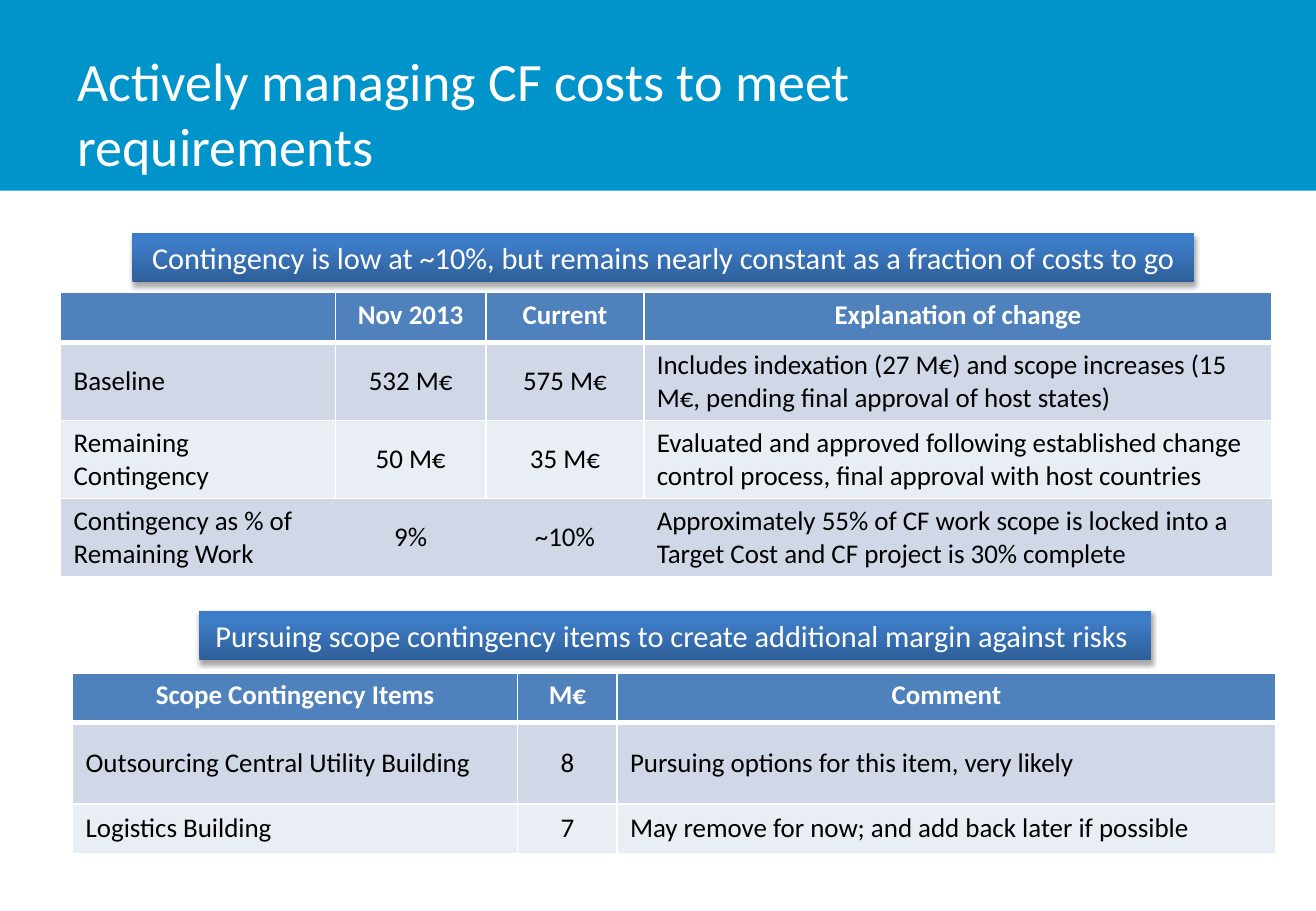
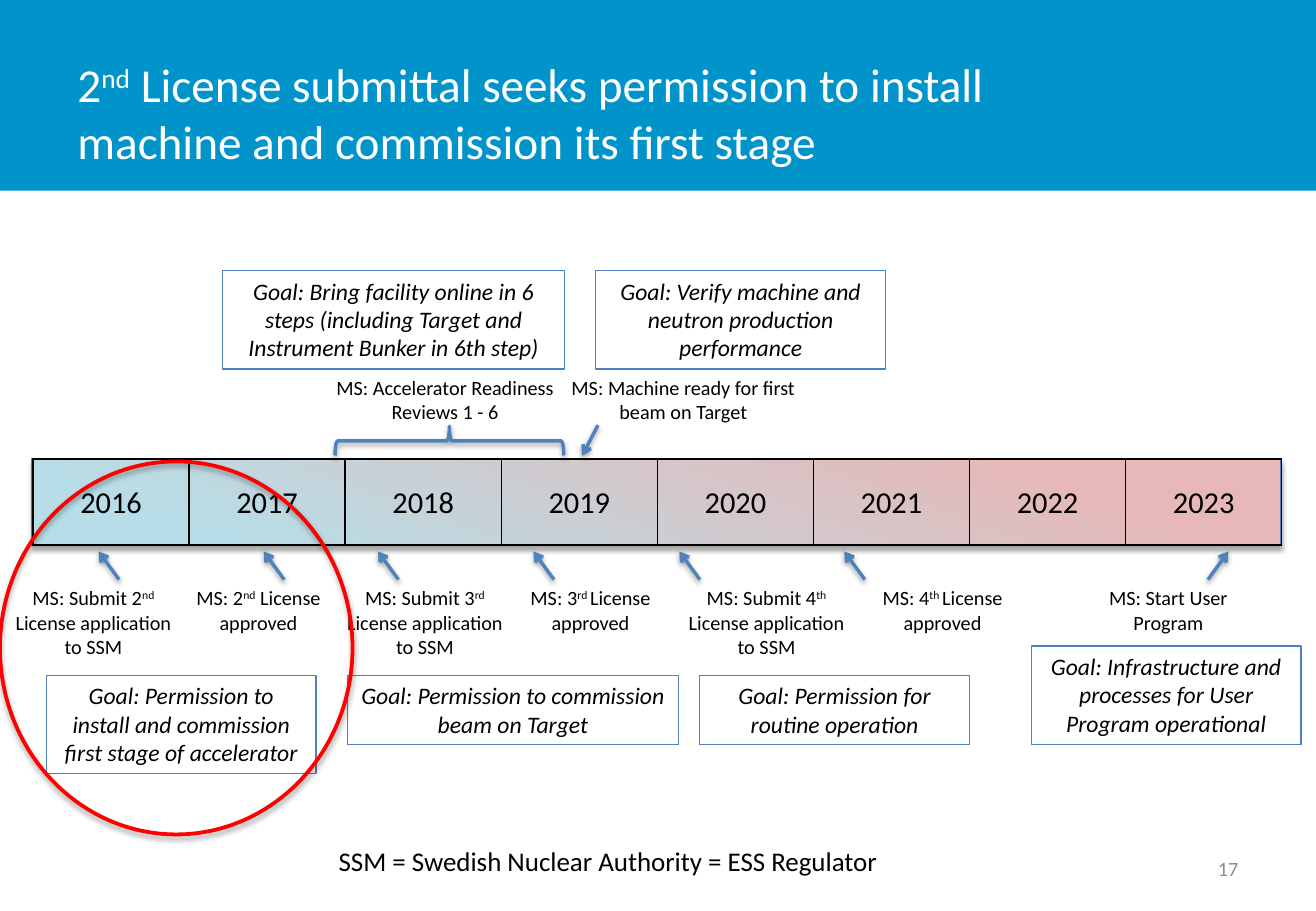
from pptx import Presentation
from pptx.util import Cm, Pt
from pptx.dml.color import RGBColor
from pptx.enum import shapes as sh, text as tx
from pptx.oxml import parse_xml
from pptx.oxml.ns import qn, nsdecls

WHITE = RGBColor(0xFF, 0xFF, 0xFF)
BLACK = RGBColor(0, 0, 0)
CYAN = RGBColor(0x00, 0x94, 0xCA)
BLUE = RGBColor(0x4F, 0x81, 0xBD)
EDGE = RGBColor(0x4B, 0x7E, 0xBC)
PALE = RGBColor(0xD0, 0xD8, 0xE8)
MIST = RGBColor(0xE9, 0xED, 0xF4)
RED = RGBColor(0xFF, 0, 0)
GREY = RGBColor(0x8C, 0x8C, 0x8C)
SHINE = [(0, RGBColor(0x2F, 0x5F, 0x99)), (80, RGBColor(0x3D, 0x7C, 0xC7)),
         (100, RGBColor(0x3A, 0x7C, 0xCB))]
WARM = [(18, RGBColor(0xE6, 0xB9, 0xB8)), (88, RGBColor(0xB7, 0xDE, 0xE8))]

LEFT, MID, RIGHT = tx.PP_ALIGN.LEFT, tx.PP_ALIGN.CENTER, tx.PP_ALIGN.RIGHT
CENTRE = tx.MSO_ANCHOR.MIDDLE
WIDE, HIGH = 27.51, 19.05
NOGRID = "{2D5ABB26-0587-4C30-8999-92F81FD0307C}"

# Text formats
TITLE = dict(size=Pt(32), color=WHITE)
TITLE2 = dict(TITLE, size=Pt(28))
BANNER = dict(size=Pt(18), color=WHITE)
HEAD = dict(size=Pt(16), color=WHITE, bold=True)
BODY = dict(size=Pt(16), color=BLACK)
YEAR = dict(size=Pt(18), color=BLACK)
MARK = dict(size=Pt(12), color=BLACK)
GOAL = dict(size=Pt(14), color=BLACK, italic=True)
PAGE = dict(size=Pt(12), color=GREY)

# Slide 1: banners (text, box) and tables; boxes are left, top, width, height in cm
COSTS = "Actively managing CF costs to meet requirements"
BANNERS = [
    ("Pursuing scope contingency items to create additional margin against risks ",
     (4.17, 12.78, 19.89, 1.02)),
    ("Contingency is low at ~10%, but remains nearly constant as a fraction of costs to go",
     (2.77, 4.88, 22.2, 1.02)),
]
BUDGET = dict(
    spot=(1.27, 6.12), cols=[5.74, 3.15, 3.3, 13.13], tall=[1.04, 1.63, 1.63, 1.63],
    mids={1, 2}, open=3,
    rows=[
        ("", "Nov 2013", "Current", "Explanation of change"),
        ("Baseline", "532 M€", "575 M€",
         "Includes indexation (27 M€) and scope increases (15 M€, pending final approval of host states)"),
        ("Remaining Contingency", "50 M€", "35 M€",
         "Evaluated and approved following established change control process, "
         "final approval with host countries"),
        ("Contingency as % of Remaining Work", "9%", "~10%",
         "Approximately 55% of CF work scope is locked into a Target Cost "
         "and CF project is 30% complete"),
    ])
SCOPE = dict(
    spot=(1.52, 14.07), cols=[9.3, 2.08, 13.77], tall=[1.04, 1.7, 1.04],
    mids={1}, open=None,
    rows=[
        ("Scope Contingency Items", "M€", "Comment"),
        ("Outsourcing Central Utility Building", "8",
         "Pursuing options for this item, very likely"),
        ("Logistics Building", "7", "May remove for now; and add back later if possible"),
    ])

# Slide 2: text between ^ marks is raised
LICENSE = ("2^nd^ License submittal seeks permission to install machine "
           "and commission its first stage")
YEARS = [str(y) for y in range(2016, 2024)]
# Text, left, width, height, arrow tip, arrow lean
STEPS = [
    ("MS: Submit 2^nd^ License application to SSM", -0.1, 4.11, 1.8, 2.06, 0.43),
    ("MS: 2^nd^ License approved", 3.35, 4.11, 1.27, 5.51, 0.43),
    ("MS: Submit 3^rd^ License application to SSM", 6.83, 4.11, 1.8, 7.9, 0.43),
    ("MS: 3^rd ^License approved", 10.29, 4.11, 1.27, 11.15, 0.43),
    ("MS: Submit 4^th^ License application to SSM", 13.97, 4.11, 1.8, 14.2, 0.43),
    ("MS: 4^th ^License approved", 17.65, 4.11, 1.27, 17.65, 0.43),
    ("MS: Start User Program", 22.2, 4.45, 1.27, 25.68, -0.43),
]
READY = [
    ("MS: Accelerator Readiness Reviews 1 - 6", (6.6, 7.72, 5.41, 1.27)),
    ("MS: Machine ready for first beam on Target", (11.58, 7.72, 5.41, 1.8)),
]
GOALS = [
    ("Goal: Permission to install and commission first stage of accelerator",
     (0.97, 14.12, 5.64, 2.06)),
    ("Goal: Permission to commission beam on Target", (7.26, 14.12, 6.93, 1.45)),
    ("Goal: Permission for routine operation", (14.63, 14.12, 5.64, 1.45)),
    ("Goal: Infrastructure and processes for User Program operational",
     (21.56, 13.51, 5.64, 2.06)),
    ("Goal: Bring facility online in 6 steps (including Target and Instrument Bunker in 6th step)",
     (4.65, 5.66, 7.16, 2.06)),
    ("Goal: Verify machine and neutron production performance", (12.45, 5.66, 6.07, 2.06)),
]


def cms(nums):
    return [Cm(n) for n in nums]


def write(frame, words, fmt, align=LEFT):
    para = frame.paragraphs[0]
    para.alignment = align
    for i, part in enumerate(words.split("^")):
        run = para.add_run()
        run.text = part
        run.font.name = "Calibri"
        for key, val in fmt.items():
            if key == "color":
                run.font.color.rgb = val
            else:
                setattr(run.font, key, val)
        if i % 2:
            run.font._element.set("baseline", "30000")


def label(slide, words, box, fmt, align=MID, wrap=True, anchor=tx.MSO_ANCHOR.TOP):
    item = slide.shapes.add_textbox(*cms(box))
    item.text_frame.word_wrap = wrap
    item.text_frame.vertical_anchor = anchor
    write(item.text_frame, words, fmt, align)
    return item


def shade(item, alpha=35, dist=23000):
    props = item._element.spPr
    for old in props.findall(qn("a:effectLst")):
        props.remove(old)
    props.append(parse_xml(
        f'<a:effectLst {nsdecls("a")}><a:outerShdw blurRad="40000" dist="{dist}" '
        f'dir="5400000" rotWithShape="0"><a:srgbClr val="000000">'
        f'<a:alpha val="{alpha}000"/></a:srgbClr></a:outerShdw></a:effectLst>'))


def shape(slide, kind, box, fill=None, line=None, width=0.75):
    item = slide.shapes.add_shape(kind, *cms(box))
    item.shadow.inherit = False
    if fill is None:
        item.fill.background()
    else:
        item.fill.solid()
        item.fill.fore_color.rgb = fill
    if line is None:
        item.line.fill.background()
    else:
        item.line.color.rgb = line
        item.line.width = Pt(width)
    return item


def blend(item, stops, angle):
    item.fill.gradient()
    item.fill.gradient_angle = angle
    group = item._element.spPr.find(".//" + qn("a:gsLst"))
    for old in list(group):
        group.remove(old)
    for pos, color in stops:
        group.append(parse_xml(f'<a:gs {nsdecls("a")} pos="{pos}000">'
                               f'<a:srgbClr val="{color}"/></a:gs>'))


def arrow(slide, x1, y1, x2, y2):
    line = slide.shapes.add_connector(sh.MSO_CONNECTOR.STRAIGHT, *cms((x1, y1, x2, y2)))
    line.line.color.rgb = BLUE
    line.line.width = Pt(2)
    line._element.spPr.find(qn("a:ln")).append(
        parse_xml(f'<a:tailEnd {nsdecls("a")} type="arrow"/>'))
    shade(line, 38, 20000)


def edge(cell, color, **sides):
    props = cell._tc.get_or_add_tcPr()
    for side in "LRTB":
        if side in sides:
            props.append(parse_xml(
                f'<a:ln{side} {nsdecls("a")} w="{Pt(sides[side])}"><a:solidFill>'
                f'<a:srgbClr val="{color}"/></a:solidFill></a:ln{side}>'))


def table(slide, spot, cols, tall):
    box = (*spot, sum(cols), sum(tall))
    frame = slide.shapes.add_table(len(tall), len(cols), *cms(box))
    grid = frame.table
    frame._element.find(".//" + qn("a:tableStyleId")).text = NOGRID
    for col, size in zip(grid.columns, cols):
        col.width = Cm(size)
    for row, size in zip(grid.rows, tall):
        row.height = Cm(size)
    return grid


def report(slide, data):
    grid = table(slide, data["spot"], data["cols"], data["tall"])
    bare = data["open"]  # this row has no borders
    for r, row in enumerate(data["rows"]):
        for c, words in enumerate(row):
            cell = grid.cell(r, c)
            sides = dict(L=1, R=1, T=3 if r == 1 else 1, B=3 if r == 0 else 1)
            if bare and r == bare - 1:
                del sides["B"]
            if r != bare:
                edge(cell, WHITE, **sides)
            cell.fill.solid()
            cell.fill.fore_color.rgb = BLUE if r == 0 else PALE if r % 2 else MIST
            cell.margin_left = cell.margin_right = Cm(0.27)
            if r:
                cell.vertical_anchor = CENTRE
            mid = r == 0 or c in data["mids"]
            write(cell.text_frame, words, BODY if r else HEAD, MID if mid else LEFT)


def start(deck, words, fmt):
    slide = deck.slides.add_slide(deck.slide_layouts[6])
    shape(slide, sh.MSO_SHAPE.RECTANGLE, (0, 0, WIDE, 3.99), CYAN)
    label(slide, words, (1.37, 0.76, 21.49, 3.18), fmt, LEFT, anchor=CENTRE)
    return slide


def costs(deck):
    slide = start(deck, COSTS, TITLE)
    for data in (BUDGET, SCOPE):
        report(slide, data)
    for words, box in BANNERS:
        item = shape(slide, sh.MSO_SHAPE.RECTANGLE, box)
        blend(item, SHINE, 90)
        shade(item)
        item.text_frame.word_wrap = False
        write(item.text_frame, words, BANNER, MID)


def plan(deck):
    slide = start(deck, LICENSE, TITLE2)
    label(slide, "17", (19.71, 17.65, 6.43, 1.02), PAGE, RIGHT, anchor=CENTRE)

    # Year bar
    bar = shape(slide, sh.MSO_SHAPE.RECTANGLE, (0.66, 9.6, 26.11, 1.8), line=EDGE)
    blend(bar, WARM, 250)
    shade(bar)
    grid = table(slide, (0.69, 9.6), [26.11 / len(YEARS)] * len(YEARS), [1.8])
    for c, words in enumerate(YEARS):
        cell = grid.cell(0, c)
        edge(cell, BLACK, L=1, R=1, T=1, B=1)
        cell.fill.background()
        cell.vertical_anchor = CENTRE
        cell.margin_left = cell.margin_right = Cm(0.05)
        cell.margin_top, cell.margin_bottom = Cm(0.03), Cm(0)
        write(cell.text_frame, words, YEAR, MID)

    # Milestones and goals
    for words, left, width, tall, tip, lean in STEPS:
        label(slide, words, (left, 12.12, width, tall), MARK)
        arrow(slide, tip + lean, 12.12, tip, 11.53)
    for words, box in READY:
        label(slide, words, box, MARK)
    for words, box in GOALS:
        item = label(slide, words, box, GOAL)
        item.line.color.rgb = BLUE
        item.line.width = Pt(0.75)
    arrow(slide, 12.5, 8.89, 12.17, 9.53)
    brace = shape(slide, sh.MSO_SHAPE.RIGHT_BRACE, (9.09, 6.83, 0.61, 4.78), line=BLUE, width=2)
    brace.rotation = 270
    shade(brace, 38, 20000)

    # Footnote and highlight
    label(slide, "SSM = Swedish Nuclear Authority = ESS Regulator",
          (6.83, 17.53, 11.94, 0.94), BODY, LEFT, wrap=False)
    ring = shape(slide, sh.MSO_SHAPE.OVAL, (0, 9.65, 7.37, 7.8), line=RED, width=2.25)
    shade(ring)


def main():
    deck = Presentation()
    deck.slide_width, deck.slide_height = Cm(WIDE), Cm(HIGH)
    costs(deck)
    plan(deck)
    deck.save("out.pptx")


if __name__ == "__main__":
    main()
